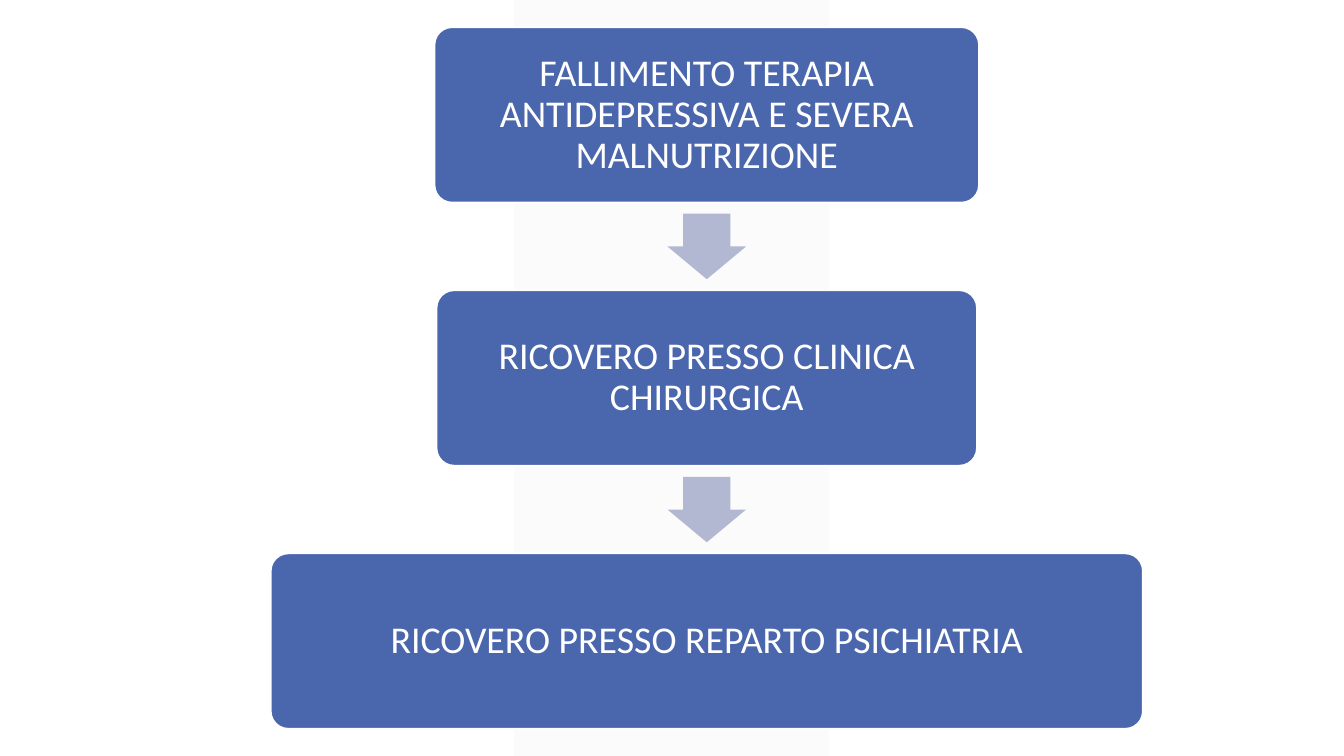
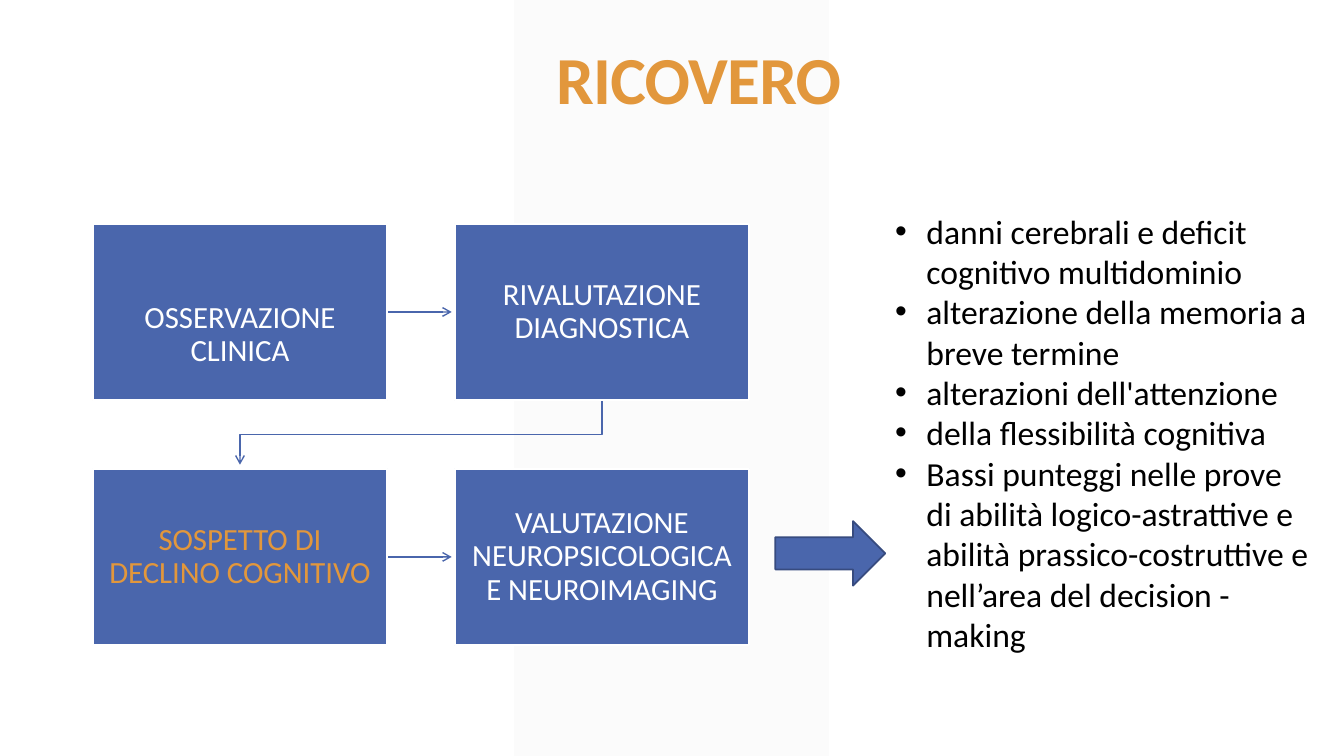
from lxml.etree import SubElement
from pptx import Presentation
from pptx.dml.color import RGBColor
from pptx.enum.shapes import MSO_CONNECTOR, MSO_SHAPE as Preset
from pptx.enum.text import MSO_ANCHOR as Anchor, PP_ALIGN as Align
from pptx.oxml.ns import qn
from pptx.util import Inches, Pt

COLORS = {
    "background": "FFFFFF", "band": "F2F2F2", "box": "4A66AC",
    "box_edge": "FFFFFF", "box_text": "FFFFFF", "step_arrow": "B2B8D2",
    "result_edge": "374B7F", "accent": "E2973C", "body": "000000",
}
FONT = "Calibri"
SLIDE_W, SLIDE_H = 13.33, 7.5

# Text and width of each step
PATHWAY = [
    ("FALLIMENTO TERAPIA ANTIDEPRESSIVA E SEVERA MALNUTRIZIONE", 5.4),
    ("RICOVERO PRESSO CLINICA CHIRURGICA", 5.36),
    ("RICOVERO PRESSO REPARTO PSICHIATRIA", 8.65),
]
# Text, colour and top inset of each stage, row by row
STAGES = [
    ("OSSERVAZIONE CLINICA", "box_text", 0.61),
    ("RIVALUTAZIONE DIAGNOSTICA", "box_text", 0.15),
    ("SOSPETTO DI DECLINO COGNITIVO", "accent", 0.15),
    ("VALUTAZIONE NEUROPSICOLOGICA E NEUROIMAGING", "box_text", 0.15),
]
FINDINGS = [
    "danni cerebrali e deficit cognitivo multidominio",
    "alterazione della memoria a breve termine",
    "alterazioni dell'attenzione",
    "della flessibilità cognitiva",
    "Bassi punteggi nelle prove di abilità logico-astrattive e abilità "
    "prassico-costruttive e nell’area del decision - making",
]


def rgb(name):
    return RGBColor.from_string(COLORS[name])


def add_preset(slide, preset, box, fill, edge=None, adjustments=()):
    shape = slide.shapes.add_shape(preset, *map(Inches, box))
    shape.shadow.inherit = False
    shape.fill.solid()
    shape.fill.fore_color.rgb = rgb(fill)
    if edge:
        shape.line.color.rgb = rgb(edge)
        shape.line.width = Pt(1.25)
    else:
        shape.line.fill.background()
    for index, value in enumerate(adjustments):
        shape.adjustments[index] = value
    return shape


def style_paragraph(paragraph, size, color, align=Align.CENTER, spacing=0.9, bold=False):
    paragraph.alignment = align
    paragraph.line_spacing = spacing
    font = paragraph.font
    font.name, font.size, font.bold = FONT, Pt(size), bold
    font.color.rgb = rgb(color)


def fill_box(shape, text, size, color, insets):
    """Write centred text; insets are left, top, right, bottom."""
    frame = shape.text_frame
    frame.word_wrap = True
    frame.vertical_anchor = Anchor.MIDDLE
    (frame.margin_left, frame.margin_top,
     frame.margin_right, frame.margin_bottom) = map(Inches, insets)
    frame.text = text
    style_paragraph(frame.paragraphs[0], size, color)


def add_text_area(slide, box):
    frame = slide.shapes.add_textbox(*map(Inches, box)).text_frame
    frame.word_wrap = True
    return frame


def finish_flow_line(line_shape):
    """Give a flow line its colour and open arrowhead, and no shadow."""
    line_shape.line.color.rgb = rgb("box")
    line_shape.line.width = Pt(1)
    properties = line_shape._element.spPr
    SubElement(properties.find(qn("a:ln")), qn("a:tailEnd"), type="arrow")
    SubElement(properties, qn("a:effectLst"))


def add_straight_flow(slide, x, y, length):
    finish_flow_line(slide.shapes.add_connector(
        MSO_CONNECTOR.STRAIGHT, Inches(x), Inches(y), Inches(x + length), Inches(y)))


def add_bent_flow(slide, points):
    start, *rest = [(Inches(x), Inches(y)) for x, y in points]
    builder = slide.shapes.build_freeform(*start)
    builder.add_line_segments(rest, close=False)
    bend = builder.convert_to_shape()
    bend.fill.background()
    finish_flow_line(bend)


def add_base_slide(deck):
    """Add a blank slide with the shared pale vertical band."""
    slide = deck.slides.add_slide(deck.slide_layouts[6])
    slide.background.fill.solid()
    slide.background.fill.fore_color.rgb = rgb("background")
    band = add_preset(slide, Preset.PARALLELOGRAM, (5.1, 0, 3.12, SLIDE_H),
                      "band", adjustments=[0])
    tint = band._element.spPr.find(qn("a:solidFill")).find(qn("a:srgbClr"))
    SubElement(tint, qn("a:alpha"), val="30000")
    return slide


def add_title(slide, text, box):
    frame = add_text_area(slide, box)
    frame.text = text
    heading = frame.paragraphs[0]
    style_paragraph(heading, 48, "accent", bold=True)
    heading.runs[0]._r.get_or_add_rPr().set("spc", "-50")


def add_pathway(slide, center_x, top):
    step_h, pitch = 1.74, 2.61
    arrow_w, arrow_h = 0.78, 0.65
    for index, (text, width) in enumerate(PATHWAY):
        y = top + index * pitch
        if index:
            arrow_y = y - (pitch - step_h + arrow_h) / 2
            add_preset(slide, Preset.DOWN_ARROW,
                       (center_x - arrow_w / 2, arrow_y, arrow_w, arrow_h),
                       "step_arrow", adjustments=[0.6, 0.5])
        step = add_preset(slide, Preset.ROUNDED_RECTANGLE,
                          (center_x - width / 2, y, width, step_h),
                          "box", "box_edge", [0.1])
        fill_box(step, text, 27, "box_text", [0.16] * 4)


def add_stage_grid(slide, left, top):
    stage_w, stage_h = 2.92, 1.75
    pitch_x, pitch_y = 3.59, 2.43
    reach = 0.64
    for row in range(2):
        add_straight_flow(slide, left + stage_w,
                          top + row * pitch_y + stage_h / 2, reach)
    first_x = left + stage_w / 2
    bottom = top + stage_h
    middle = bottom + (pitch_y - stage_h) / 2
    add_bent_flow(slide, [(first_x + pitch_x, bottom), (first_x + pitch_x, middle),
                          (first_x, middle), (first_x, bottom + reach)])
    for index, (text, color, inset_top) in enumerate(STAGES):
        row, column = divmod(index, 2)
        stage = add_preset(slide, Preset.RECTANGLE,
                           (left + column * pitch_x, top + row * pitch_y, stage_w, stage_h),
                           "box", "box_edge")
        fill_box(stage, text, 22, color, (0.14, inset_top, 0.14, 0.15))


def add_findings(slide, box):
    frame = add_text_area(slide, box)
    for index, finding in enumerate(FINDINGS):
        paragraph = frame.add_paragraph() if index else frame.paragraphs[0]
        paragraph.text = finding
        properties = paragraph._p.get_or_add_pPr()
        properties.set("marL", str(Inches(0.31)))
        properties.set("indent", str(-Inches(0.31)))
        SubElement(properties, qn("a:buFont"), typeface="Arial")
        SubElement(properties, qn("a:buChar"), char="•")
        style_paragraph(paragraph, 24, "body", Align.LEFT, 1.0)


def build_pathway_slide(deck):
    add_pathway(add_base_slide(deck), center_x=7.01, top=0.27)


def build_admission_slide(deck):
    slide = add_base_slide(deck)
    add_title(slide, "RICOVERO", (1.18, 0.41, 11.5, 1.45))
    add_stage_grid(slide, left=0.92, top=2.22)
    add_preset(slide, Preset.RIGHT_ARROW, (7.69, 5.17, 1.09, 0.64), "box", "result_edge")
    add_findings(slide, (8.78, 2.04, 4.31, 4.54))


def main():
    deck = Presentation()
    deck.slide_width, deck.slide_height = Inches(SLIDE_W), Inches(SLIDE_H)
    build_pathway_slide(deck)
    build_admission_slide(deck)
    deck.save("out.pptx")


if __name__ == "__main__":
    main()
